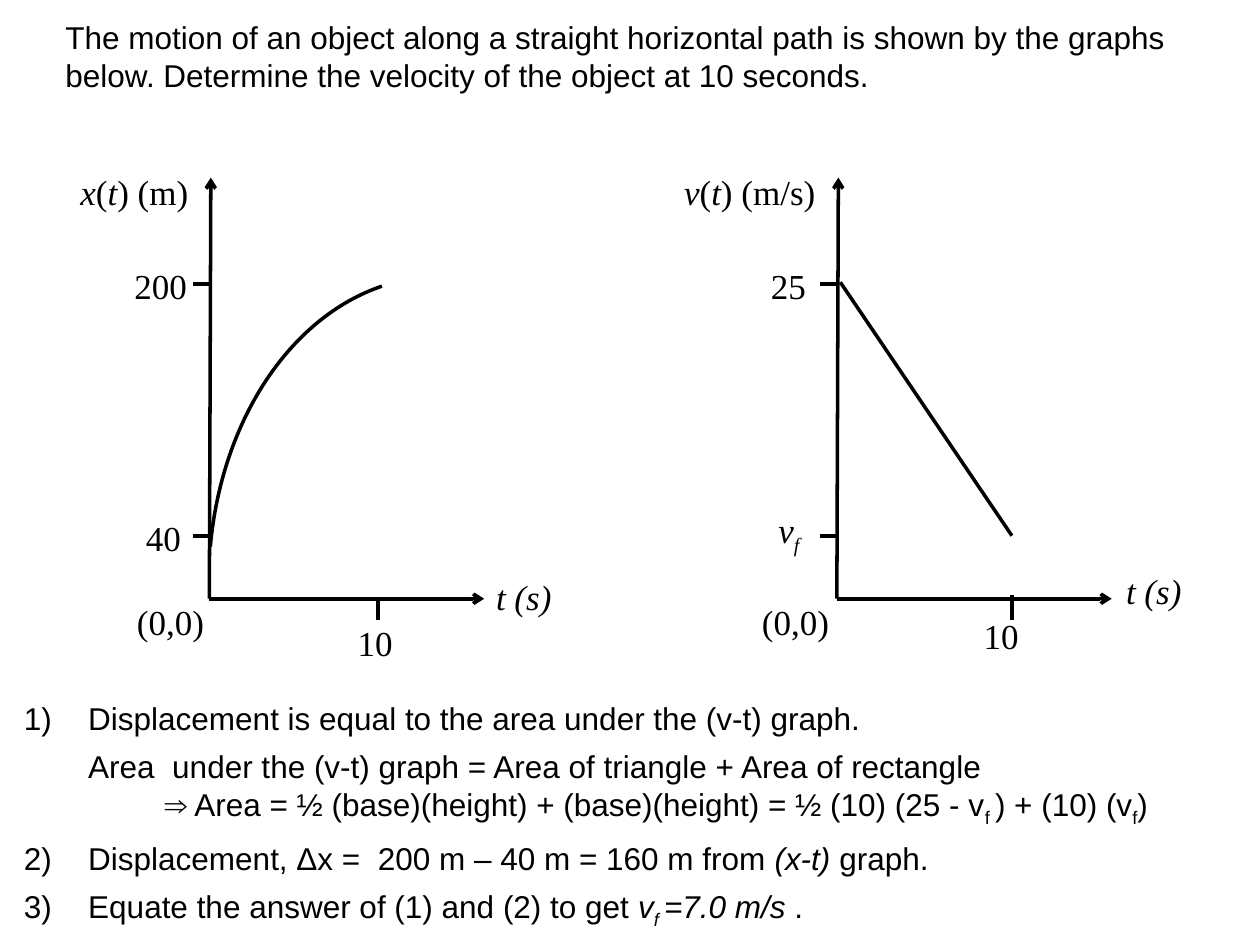
"""Build a slide that finds a final velocity from position and velocity graphs."""
from dataclasses import dataclass, field

import lxml.etree
import pptx
import pptx.dml.color
import pptx.enum.shapes
import pptx.enum.text
import pptx.oxml.ns
import pptx.util
from pptx.util import Cm

qn = pptx.oxml.ns.qn


@dataclass(frozen=True)
class Theme:
    """Colours, fonts, sizes and run styles."""
    ink: object = pptx.dml.color.RGBColor(0, 0, 0)
    stroke: object = pptx.util.Pt(2)
    body: dict = field(default_factory=lambda: {"name": "Arial", "size": pptx.util.Pt(18)})
    label: dict = field(default_factory=lambda: {"name": "Times New Roman", "size": pptx.util.Pt(20)})
    subscript: str = "-25000"


THEME = Theme()

POSITION_GRAPH = {
    "origin": (4.22, 12.07), "ten": 3.4, "ten_top": 12.07,
    "labels": [
        (1.37, 3.18, 3.3, [("x", "i"), ("(", ""), ("t", "i"), (") (m)", "")]),
        (2.46, 5.08, 2.0, [("200", "")]),
        (2.69, 10.16, 1.6, [("40", "")]),
        (2.51, 11.86, 2.2, [("(0,0)", "")]),
        (6.96, 12.27, 1.6, [("10", "")]),
        (9.75, 11.35, 2.3, [("t (s)", "i")]),
    ],
}
VELOCITY_GRAPH = {
    "origin": (16.87, 12.07), "ten": 3.53, "ten_top": 11.99,
    "labels": [
        (13.54, 3.18, 3.8, [("v", "i"), ("(", ""), ("t", "i"), (") (m/s)", "")]),
        (15.29, 5.08, 1.6, [("25", "")]),
        (15.44, 9.98, 1.4, [("v", "i"), ("f", "is")]),
        (15.11, 11.86, 2.2, [("(0,0)", "")]),
        (19.58, 12.14, 1.6, [("10", "")]),
        (22.45, 11.23, 2.3, [("t (s)", "i")]),
    ],
}
STEPS = [
    (1, 1.3, 6, [("Displacement is equal to the area under the (v-t) graph.", "")]),
    (None, 1.3, 0, [("Area  under the (v-t) graph = Area of triangle + Area of rectangle", "")]),
    (None, 2.84, 6, [("⇒ Area = ½ (base)(height) + (base)(height) = ½ (10) (25 - v", ""),
                     ("f ", "s"), (") + (10) (v", ""), ("f", "s"), (")", "")]),
    (2, 1.3, 6, [("Displacement, Δx =  200 m – 40 m = 160 m from ", ""),
                 ("(x-t) ", "i"), ("graph.", "")]),
    (3, 1.3, 6, [("Equate the answer of (1) and (2) to get ", ""), ("v", "i"),
                 ("f ", "is"), ("=7.0 m/s", "i"), (" .", "")]),
]


def set_all(target, values):
    """Set attributes from a dict of format values."""
    for name, value in values.items():
        setattr(target, name, value)


def add_box(page, left, top, width, height, **frame):
    """Add a wrapping text box and return its text frame."""
    box = page.shapes.add_textbox(Cm(left), Cm(top), Cm(width), Cm(height))
    set_all(box.text_frame, {"word_wrap": True, **frame})
    return box.text_frame


def add_spans(para, spans, font):
    """Write runs whose style letters mean italic (i) and subscript (s)."""
    for text, style in spans:
        span = para.add_run()
        span.text = text
        set_all(span.font, {**font, "italic": "i" in style})
        span.font.color.rgb = THEME.ink
        if "s" in style:
            span.font._element.set("baseline", THEME.subscript)


def add_label(page, left, top, width, spans):
    """Add one graph label."""
    para = add_box(page, left, top, width, 1.27).paragraphs[0]
    set_all(para, {"line_spacing": 1.15, "space_after": pptx.util.Pt(10)})
    add_spans(para, spans, THEME.label)


def add_line(page, start, end, arrow=False):
    """Draw a straight line, with an arrowhead at its end if asked."""
    line = page.shapes.add_connector(
        pptx.enum.shapes.MSO_CONNECTOR.STRAIGHT, *map(Cm, (*start, *end)))
    line.line.color.rgb = THEME.ink
    line.line.width = THEME.stroke
    if arrow:
        lxml.etree.SubElement(line.line._get_or_add_ln(), qn("a:tailEnd"), type="arrow")
    lxml.etree.SubElement(line._element.spPr, qn("a:effectLst"))


def add_curve(page, start, *controls):
    """Draw one cubic curve through its three control points."""
    builder = page.shapes.build_freeform(*map(Cm, start), scale=1.0)
    builder.add_line_segments([tuple(map(Cm, point)) for point in controls], close=False)
    curve = builder.convert_to_shape()
    outline = next(curve._element.iter(qn("a:path")))
    bezier = lxml.etree.SubElement(outline, qn("a:cubicBezTo"))
    for segment in outline.findall(qn("a:lnTo")):
        bezier.append(segment[0])
        outline.remove(segment)
    curve.fill.background()
    curve.line.color.rgb = THEME.ink
    curve.line.width = THEME.stroke
    curve.shadow.inherit = False


def add_graph(page, graph):
    """Draw axes, ticks and labels of one graph."""
    x, y = graph["origin"]
    add_line(page, (x, y), (x + 5.54, y), arrow=True)
    add_line(page, (x, y), (x + 0.03, 3.58), arrow=True)
    for tick in (5.72, 10.8):
        add_line(page, (x - 0.33, tick), (x, tick))
    ten = x + graph["ten"]
    add_line(page, (ten, graph["ten_top"]), (ten, 12.5))
    for label in graph["labels"]:
        add_label(page, *label)


def add_question(page, text):
    """Add the problem statement."""
    frame = add_box(page, 1.07, 0.23, 23.06, 1.8,
                    vertical_anchor=pptx.enum.text.MSO_ANCHOR.MIDDLE,
                    auto_size=pptx.enum.text.MSO_AUTO_SIZE.SHAPE_TO_FIT_TEXT)
    add_spans(frame.paragraphs[0], [(text, "")], THEME.body)


def add_steps(page, steps):
    """Add the numbered solution with its indented working."""
    frame = add_box(page, 0.23, 13.97, 24.56, 4.75,
                    auto_size=pptx.enum.text.MSO_AUTO_SIZE.SHAPE_TO_FIT_TEXT)
    for index, (number, indent, gap, spans) in enumerate(steps):
        para = frame.add_paragraph() if index else frame.paragraphs[0]
        properties = para._p.get_or_add_pPr()
        properties.set("marL", str(Cm(indent)))
        properties.set("indent", str(-Cm(indent) if number else 0))
        if number:
            lxml.etree.SubElement(properties, qn("a:buFont"), typeface="+mj-lt")
            lxml.etree.SubElement(properties, qn("a:buAutoNum"),
                                  type="arabicParenR", startAt=str(number))
        else:
            lxml.etree.SubElement(properties, qn("a:buNone"))
        para.space_after = pptx.util.Pt(gap)
        add_spans(para, spans, THEME.body)


def main():
    """Build and save the deck."""
    deck = pptx.Presentation()
    set_all(deck, {"slide_width": Cm(25.4), "slide_height": Cm(19.05)})
    page = deck.slides.add_slide(deck.slide_layouts[6])
    add_question(page, "The motion of an object along a straight horizontal path is shown "
                       "by the graphs below. Determine the velocity of the object at 10 seconds.")
    for graph in (POSITION_GRAPH, VELOCITY_GRAPH):
        add_graph(page, graph)
    add_curve(page, (4.24, 11.02), (4.47, 8.48), (5.84, 6.4), (7.7, 5.77))
    add_line(page, (16.94, 5.69), (20.4, 10.8))
    add_steps(page, STEPS)
    deck.save("out.pptx")


if __name__ == "__main__":
    main()
